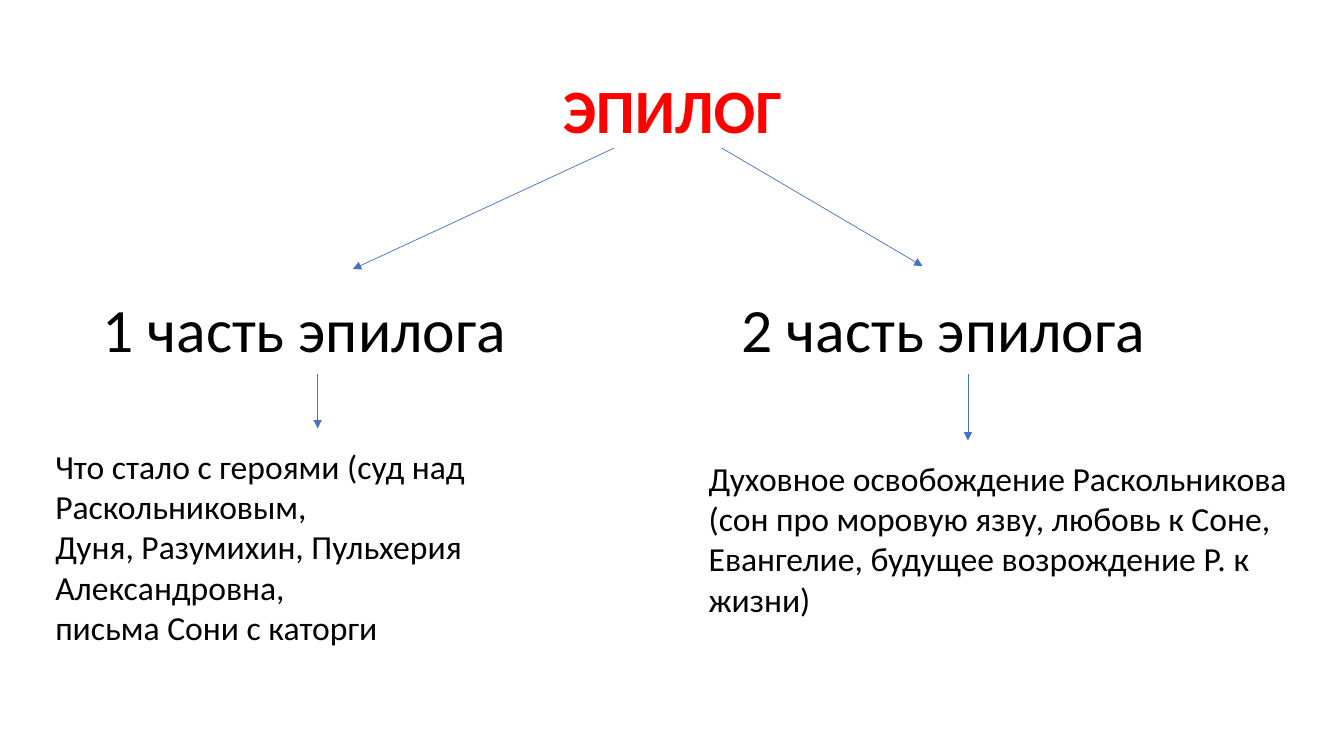
from lxml import etree
from pptx import Presentation
from pptx.dml.color import RGBColor
from pptx.enum.shapes import MSO_CONNECTOR
from pptx.enum.text import MSO_ANCHOR, PP_ALIGN
from pptx.oxml.ns import qn
from pptx.util import Inches, Pt

STRAIGHT = MSO_CONNECTOR.STRAIGHT
TOP, MIDDLE = MSO_ANCHOR.TOP, MSO_ANCHOR.MIDDLE
LEFT, CENTER = PP_ALIGN.LEFT, PP_ALIGN.CENTER

COLORS = {"title": "FF0000", "text": "000000", "arrow": "4472C4"}
FONT = "Calibri"
WIDTH, HEIGHT = 13.33, 7.5
TITLE_BOX = (0.92, 0.4, 11.5, 1.45)

# Each box spans from the arrow tip above a part to the end of its details;
# the other lengths are counted from the box's left edge.
PARTS = [
    {
        "box": (0.45, 2.67, 5.64, 3.82),
        "branch_from": (6.09, 1.47), "branch_to": 3.05,
        "heading_at": 0.47, "arrow_at": 2.7, "arrow_length": 0.54,
        "heading": "1 часть эпилога",
        "details": [
            "Что стало с героями (суд над Раскольниковым,",
            "Дуня, Разумихин, Пульхерия Александровна,",
            "письма Сони с каторги",
        ],
    },
    {
        "box": (6.93, 2.64, 6.34, 3.58),
        "branch_from": (7.16, 1.47), "branch_to": 2.22,
        "heading_at": 0.33, "arrow_at": 2.67, "arrow_length": 0.66,
        "heading": "2 часть эпилога",
        "details": [
            "Духовное освобождение Раскольникова",
            "(сон про моровую язву, любовь к Соне, Евангелие, "
            "будущее возрождение Р. к жизни)",
        ],
    },
]
HEADING_TOP, HEADING_SIZE = 2.92, (4.8, 0.77)
ARROW_TOP, ARROW_GAP = 3.71, 0.12


def add_text(s, box, lines, size, color="text", bold=False,
             align=LEFT, anchor=TOP, spacing=1.0):
    tf = s.shapes.add_textbox(*map(Inches, box)).text_frame
    tf.word_wrap = True
    tf.vertical_anchor = anchor
    for i, line in enumerate(lines):
        p = tf.add_paragraph() if i else tf.paragraphs[0]
        p.alignment, p.line_spacing = align, spacing
        r = p.add_run()
        r.text = line
        font = {"name": FONT, "size": Pt(size), "bold": bold}
        for name, value in font.items():
            setattr(r.font, name, value)
        r.font.color.rgb = RGBColor.from_string(COLORS[color])


def add_arrow(s, start, end):
    c = s.shapes.add_connector(STRAIGHT, *map(Inches, (*start, *end)))
    c.line.width = Pt(0.5)
    c.line.color.rgb = RGBColor.from_string(COLORS["arrow"])
    ln = c.line._get_or_add_ln()
    etree.SubElement(ln, qn("a:tailEnd"), type="triangle")
    etree.SubElement(ln.getparent(), qn("a:effectLst"))


def add_title(s, box):
    add_text(s, box, ["ЭПИЛОГ"], 44, "title", bold=True,
             align=CENTER, anchor=MIDDLE, spacing=0.9)


def add_part(s, box, part):
    """Place a branch arrow, heading, down arrow and details in the box."""
    x, y, w, h = box
    add_arrow(s, part["branch_from"], (x + part["branch_to"], y))
    add_text(s, (x + part["heading_at"], HEADING_TOP, *HEADING_SIZE),
             [part["heading"]], 44, spacing=0.9)
    arrow_x = x + part["arrow_at"]
    arrow_end = ARROW_TOP + part["arrow_length"]
    add_arrow(s, (arrow_x, ARROW_TOP), (arrow_x, arrow_end))
    top = arrow_end + ARROW_GAP
    add_text(s, (x, top, w, y + h - top), part["details"], 24)


def main():
    prs = Presentation()
    prs.slide_width, prs.slide_height = Inches(WIDTH), Inches(HEIGHT)
    s = prs.slides.add_slide(prs.slide_layouts[6])
    add_title(s, TITLE_BOX)
    for part in PARTS:
        add_part(s, part["box"], part)
    prs.save("out.pptx")


if __name__ == "__main__":
    main()
